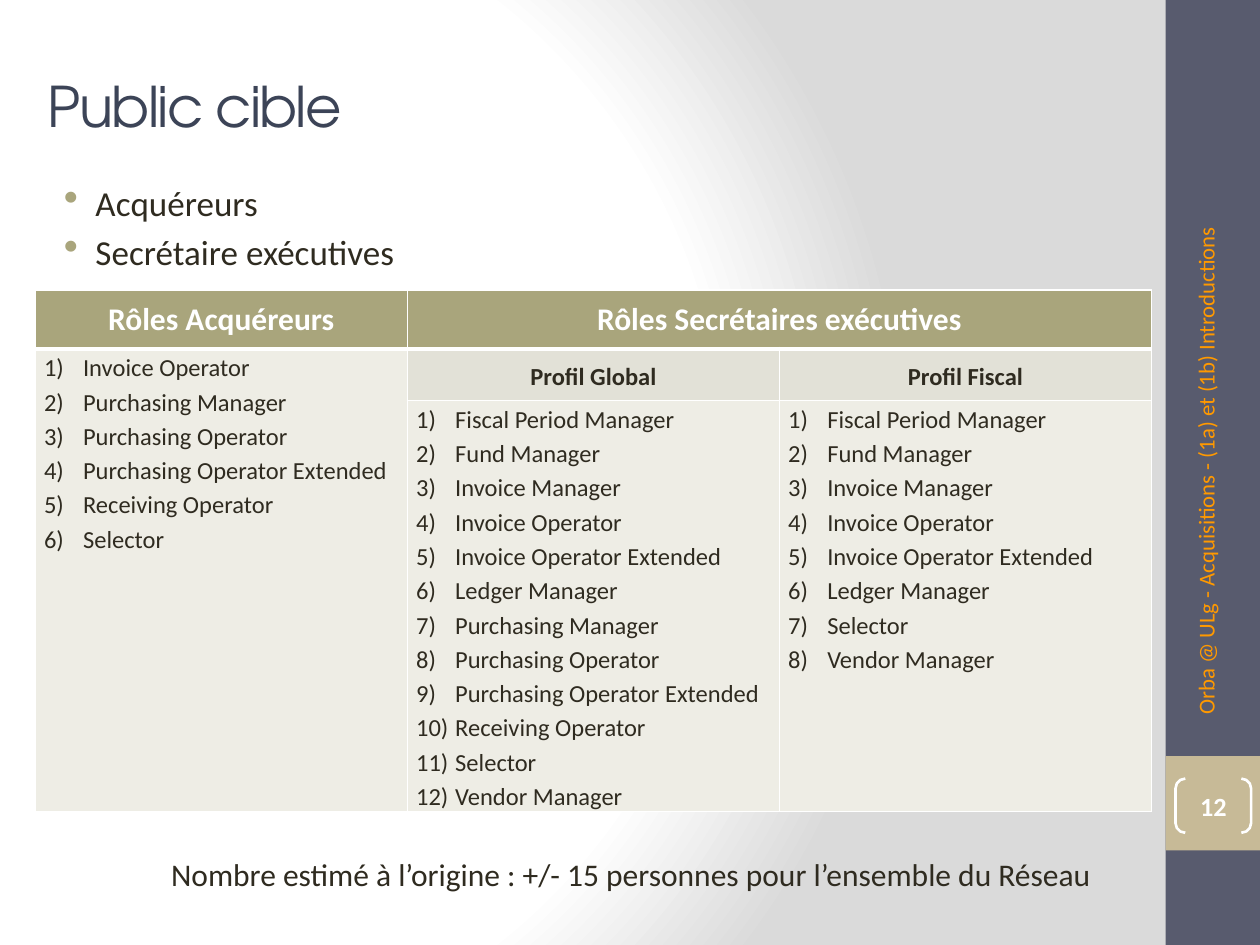
from dataclasses import dataclass

from lxml import etree
from pptx import Presentation
from pptx import util as u
from pptx.dml.color import RGBColor
from pptx.enum import shapes, text
from pptx.oxml import ns, parse_xml


@dataclass(frozen=True)
class Theme:
    font: str = "Calibri"
    head: str = "TeX Gyre Adventor"
    ink: str = "2F2B20"
    navy: str = "3C4457"
    slate: str = "585B6E"
    sand: str = "C7BA97"
    olive: str = "A9A57C"
    pale: str = "EEEDE5"
    band: str = "E2E1D7"
    amber: str = "FF9900"
    white: str = "FFFFFF"
    gray: str = "DADADA"
    title: int = 32
    body: int = 20
    note: int = 18
    page: int = 15
    cell: int = 14
    side: int = 13


T = Theme()
LEFT, MID = text.PP_ALIGN.LEFT, text.PP_ALIGN.CENTER
TOP, CENTER = text.MSO_ANCHOR.TOP, text.MSO_ANCHOR.MIDDLE
SHAPE = shapes.MSO_SHAPE

BUYER = ["Invoice Operator", "Purchasing Manager", "Purchasing Operator",
         "Purchasing Operator Extended", "Receiving Operator", "Selector"]
FISCAL = ["Fiscal Period Manager", "Fund Manager", "Invoice Manager",
          "Invoice Operator", "Invoice Operator Extended", "Ledger Manager",
          "Selector", "Vendor Manager"]
GLOBAL = FISCAL[:6] + BUYER[1:] + FISCAL[-1:]


def rgb(code):
    return RGBColor.from_string(code)


def box(*lens):
    return [u.Inches(n) for n in lens]


def apply(obj, vals):
    for key, val in vals.items():
        setattr(obj, key, val)


def mark(para, left, hang, items):
    props = para._p.get_or_add_pPr()
    props.set("marL", str(u.Inches(left)))
    props.set("indent", str(u.Inches(hang)))
    for tag, vals in items:
        etree.SubElement(props, ns.qn(tag), vals)
    return props


def dot(para):
    props = mark(para, 0.38, -0.25, [("a:buClr", {}), ("a:buSzPct", {"val": "120000"}),
                                     ("a:buChar", {"char": "•"})])
    etree.SubElement(props.find(ns.qn("a:buClr")), ns.qn("a:srgbClr"), val=T.olive)


def count(para):
    mark(para, 0.31, -0.31, [("a:buAutoNum", {"type": "arabicParenR"})])


def write(frame, lines, size, color=T.ink, face=T.font, bold=False,
          align=LEFT, bullet=None, gap=0, lead=None):
    for i, line in enumerate(lines):
        para = frame.add_paragraph() if i else frame.paragraphs[0]
        run = para.add_run()
        run.text = line
        if bullet:
            bullet(para)
        apply(para, {"alignment": align, "line_spacing": lead,
                     "space_before": u.Pt(gap if i else 0)})
        apply(run.font, {"name": face, "size": u.Pt(size), "bold": bold})
        run.font.color.rgb = rgb(color)


def label(slide, spot, lines, size, turn=0, **style):
    item = slide.shapes.add_textbox(*box(*spot))
    item.rotation = turn
    item.text_frame.word_wrap = True
    write(item.text_frame, lines, size, **style)


def block(slide, spot, color):
    item = slide.shapes.add_shape(SHAPE.RECTANGLE, *box(*spot))
    item.shadow.inherit = False
    item.fill.solid()
    item.fill.fore_color.rgb = rgb(color)
    item.line.fill.background()


def badge(slide, spot, word):
    item = slide.shapes.add_shape(SHAPE.DOUBLE_BRACKET, *box(*spot))
    item.shadow.inherit = False
    item.adjustments[0] = 0.18
    item.fill.background()
    item.line.color.rgb = rgb(T.white)
    item.line.width = u.Pt(1.5)
    apply(item.text_frame, {"margin_left": 0, "margin_right": 0, "margin_top": 0,
                            "margin_bottom": 0, "vertical_anchor": CENTER})
    write(item.text_frame, [word], T.page, T.white, bold=True, align=MID)


def backdrop(slide):
    slide.background.fill.solid()
    props = slide._element.find(".//" + ns.qn("p:bgPr"))
    stops = "".join(f'<a:gs pos="{pos * 1000}"><a:srgbClr val="{color}"/></a:gs>'
                    for pos, color in [(0, T.white), (38, T.white),
                                       (75, T.white), (100, T.gray)])
    props.replace(props[0], parse_xml(
        f'<a:gradFill {ns.nsdecls("a")} rotWithShape="1"><a:gsLst>{stops}</a:gsLst>'
        '<a:path path="circle"><a:fillToRect l="20000" t="50000" r="100000" b="50000"/>'
        '</a:path></a:gradFill>'))


def heading(slide, words):
    item = slide.shapes.title
    apply(item, dict(zip(("left", "top", "width", "height"),
                         box(0.28, 0.21, 8.74, 1.25))))
    item.text_frame.vertical_anchor = CENTER
    write(item.text_frame, [words], T.title, T.navy, T.head)
    item.text_frame.paragraphs[0].runs[0].font._element.set("spc", "-100")


def edge(cell, row):
    props = cell._tc.get_or_add_tcPr()
    wide = {"T": 3 if row == 1 else 1, "B": 1 if row else 3}
    for i, side in enumerate("LRTB"):
        props.insert(i, parse_xml(
            f'<a:ln{side} {ns.nsdecls("a")} w="{u.Pt(wide.get(side, 1))}"><a:solidFill>'
            f'<a:srgbClr val="{T.white}"/></a:solidFill></a:ln{side}>'))


def grid(slide):
    rows = [0.47, 0.41, 3.26]
    table = slide.shapes.add_table(3, 3, *box(0.28, 2.3, 8.86, sum(rows))).table
    for row, high in zip(table.rows, rows):
        row.height = u.Inches(high)
    for col in table.columns:
        col.width = u.Inches(8.86 / 3)
    table.cell(0, 1).merge(table.cell(0, 2))
    table.cell(1, 0).merge(table.cell(2, 0))

    top = dict(size=T.note, color=T.white, bold=True, align=MID)
    sub = dict(size=T.cell, bold=True, align=MID, lead=1.15)
    roles = dict(size=T.cell, bullet=count, lead=1.15)
    cells = {
        (0, 0): (["Rôles Acquéreurs"], T.olive, top),
        (0, 1): (["Rôles Secrétaires exécutives"], T.olive, top),
        (1, 0): (BUYER, T.pale, roles),
        (1, 1): (["Profil Global"], T.band, sub),
        (1, 2): (["Profil Fiscal"], T.band, sub),
        (2, 1): (GLOBAL, T.pale, roles),
        (2, 2): (FISCAL, T.pale, roles),
    }
    for row in range(3):
        for col in range(3):
            cell = table.cell(row, col)
            lines, color, style = cells.get(
                (row, col), ([], T.pale if row else T.olive, roles))
            cell.fill.solid()
            cell.fill.fore_color.rgb = rgb(color)
            apply(cell, {"margin_left": u.Inches(0.07), "margin_right": u.Inches(0.07),
                         "margin_top": 0, "margin_bottom": 0,
                         "vertical_anchor": TOP if style is roles else CENTER})
            write(cell.text_frame, lines, **style)
            edge(cell, row)


def main():
    deck = Presentation()
    deck.slide_width, deck.slide_height = box(10, 7.5)
    slide = deck.slides.add_slide(deck.slide_layouts[5])
    backdrop(slide)
    block(slide, (9.25, 0, 0.75, 7.5), T.slate)
    block(slide, (9.25, 6, 0.75, 0.75), T.sand)
    heading(slide, "Public cible")
    label(slide, (0.28, 1.39, 8.74, 0.94), ["Acquéreurs", "Secrétaire exécutives"],
          T.body, bullet=dot, gap=4)
    badge(slide, (9.33, 6.18, 0.6, 0.43), "12")
    label(slide, (6.83, 2.79, 5.56, 0.4),
          ["Orba @ ULg - Acquisitions - (1a) et (1b) Introductions"],
          T.side, turn=270, color=T.amber)
    grid(slide)
    label(slide, (1.14, 6.74, 7.8, 0.56),
          ["Nombre estimé à l’origine : +/- 15 personnes pour l’ensemble du Réseau"],
          T.note, bullet=lambda para: mark(para, 0.12, 0, []))
    deck.save("out.pptx")


if __name__ == "__main__":
    main()
